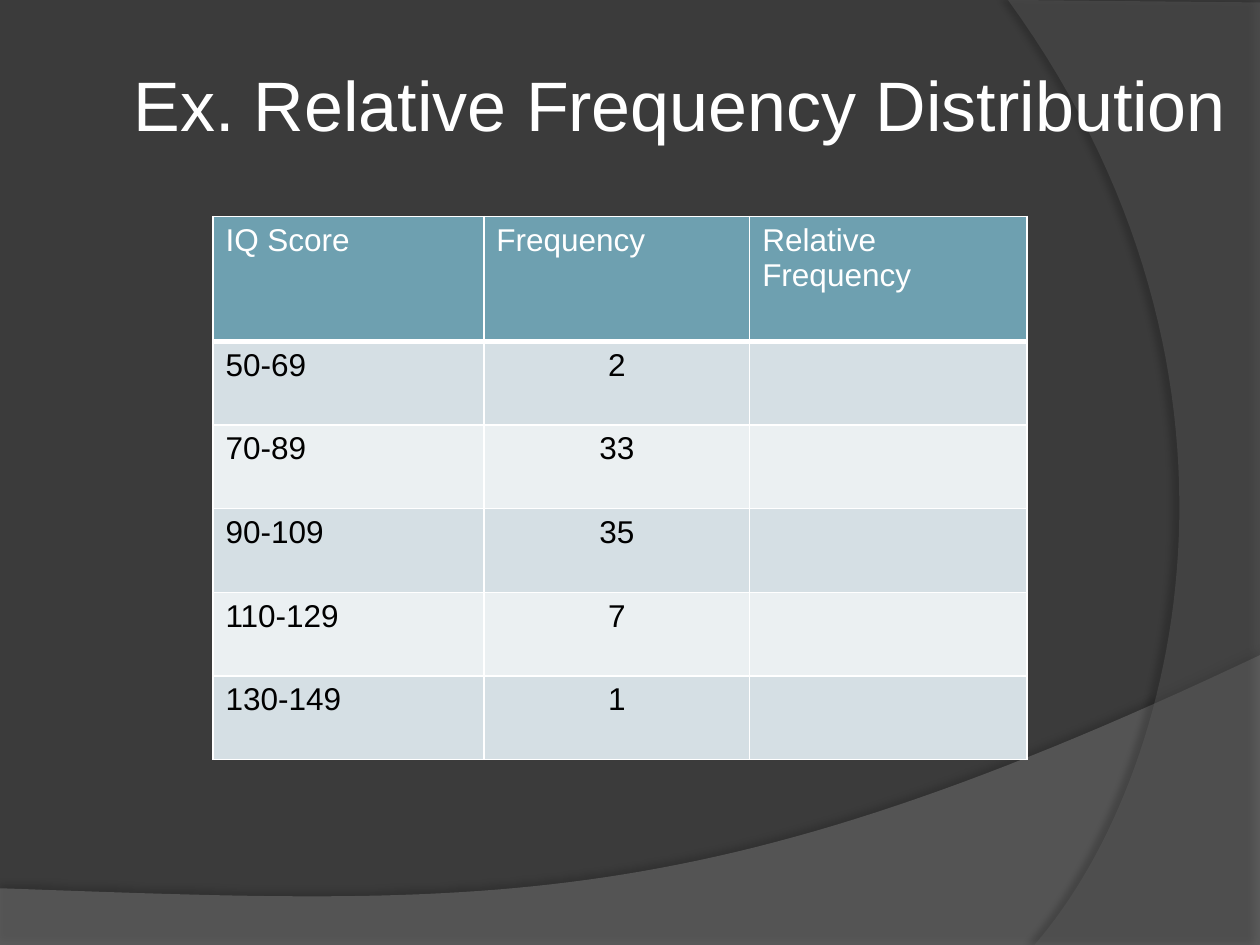
from dataclasses import dataclass

from lxml.etree import SubElement
from pptx import Presentation
from pptx.dml.color import RGBColor
from pptx.enum.text import MSO_ANCHOR, MSO_AUTO_SIZE, PP_ALIGN
from pptx.oxml.ns import qn
from pptx.util import Inches, Pt


@dataclass(frozen=True)
class Theme:
    font: str = "Arial"
    title_size: int = 40
    table_size: int = 18
    background: str = "3B3B3B"
    lower_wave: str = "7F7F7F"
    side_wave: str = "5E5E5E"
    shadow: str = "000000"
    light: str = "FFFFFF"
    dark: str = "000000"
    header: str = "6EA0B0"
    bands: tuple = ("D5DFE4", "EBF0F2")


THEME = Theme()
HEADINGS = ("IQ Score", "Frequency", "Relative Frequency")
SCORES = (
    ("50-69", "2", ""),
    ("70-89", "33", ""),
    ("90-109", "35", ""),
    ("110-129", "7", ""),
    ("130-149", "1", ""),
)


def add_span(para, text, size, color):
    span = para.add_run()
    span.text = text
    span.font.name = THEME.font
    span.font.size = Pt(size)
    span.font.color.rgb = RGBColor.from_string(color)


def curve(start, first, second, end, steps=60):
    points = []
    for step in range(steps + 1):
        t = step / steps
        weights = ((1 - t) ** 3, 3 * t * (1 - t) ** 2, 3 * t * t * (1 - t), t ** 3)
        points.append(tuple(
            sum(weight * value for weight, value in zip(weights, values))
            for values in zip(start, first, second, end)
        ))
    return points


def add_color(parent, color, opacity):
    node = SubElement(parent, qn("a:srgbClr"), val=color)
    SubElement(node, qn("a:alpha"), val=str(opacity * 1000))


def add_wave(page, points, color, opacity, shadow_opacity, distance, direction):
    corners = [(Inches(x), Inches(y)) for x, y in points]
    builder = page.shapes.build_freeform(*corners[0])
    builder.add_line_segments(corners[1:], close=True)
    wave = builder.convert_to_shape()
    wave.line.fill.background()
    wave.fill.solid()
    wave.fill.fore_color.rgb = RGBColor.from_string(color)
    properties = wave.element.spPr
    fill = properties.find(qn("a:solidFill"))
    fill.remove(fill[0])
    add_color(fill, color, opacity)
    effects = SubElement(properties, qn("a:effectLst"))
    shadow = SubElement(
        effects, qn("a:outerShdw"), blurRad=str(Pt(4)), dist=str(Pt(distance)),
        dir=str(direction * 60000), algn="ctr", rotWithShape="0",
    )
    add_color(shadow, THEME.shadow, shadow_opacity)


def add_backdrop(page, left, top, width, height):
    right, bottom = left + width, top + height
    page.background.fill.solid()
    page.background.fill.fore_color.rgb = RGBColor.from_string(THEME.background)
    lower_edge = curve((right, top + 5.2), (left + 5.59, top + 7.29),
                       (left + 3.91, top + 7.19), (left, top + 7.05))
    add_wave(page, [(left, bottom), (right, bottom), *lower_edge],
             THEME.lower_wave, 45, 35, 3.5, 270)
    side_edge = curve((left + 8.21, bottom), (left + 9.35, top + 6.19),
                      (left + 10.18, top + 3), (left + 8, top))
    add_wave(page, [(right, top + 0.02), (right, bottom), *side_edge],
             THEME.side_wave, 40, 45, 4, 180)


def place_title(page, text, left, top, width, height):
    title = page.shapes.title
    title.left, title.top = Inches(left), Inches(top)
    title.width, title.height = Inches(width), Inches(height)
    frame = title.text_frame
    frame.word_wrap = False
    frame.auto_size = MSO_AUTO_SIZE.SHAPE_TO_FIT_TEXT
    frame.vertical_anchor = MSO_ANCHOR.TOP
    para = frame.paragraphs[0]
    para.alignment = PP_ALIGN.LEFT
    add_span(para, text, THEME.title_size, THEME.light)
    page.shapes.element.append(title.element)


def style_cell(cell, fill, bottom_width):
    properties = cell._tc.get_or_add_tcPr()
    for side in ("L", "R", "T", "B"):
        width = bottom_width if side == "B" else 1
        border = SubElement(properties, qn(f"a:ln{side}"), w=str(Pt(width)))
        paint = SubElement(border, qn("a:solidFill"))
        SubElement(paint, qn("a:srgbClr"), val=THEME.light)
    cell.fill.solid()
    cell.fill.fore_color.rgb = RGBColor.from_string(fill)


def add_score_table(page, left, top, width, height):
    rows = (HEADINGS, *SCORES)
    table = page.shapes.add_table(
        len(rows), len(HEADINGS), Inches(left), Inches(top), Inches(width), Inches(height)
    ).table
    column_widths = (2.15, 2.11, width - 2.15 - 2.11)
    for column, column_width in zip(table.columns, column_widths):
        column.width = Inches(column_width)
    header_height = 0.99
    for index, values in enumerate(rows):
        is_header = index == 0
        row_height = header_height if is_header else (height - header_height) / len(SCORES)
        table.rows[index].height = Inches(row_height)
        fill = THEME.header if is_header else THEME.bands[(index - 1) % 2]
        color = THEME.light if is_header else THEME.dark
        for position, text in enumerate(values):
            cell = table.cell(index, position)
            style_cell(cell, fill, 3 if is_header else 1)
            para = cell.text_frame.paragraphs[0]
            para.font.size = Pt(THEME.table_size)
            if position == 1 and not is_header:
                para.alignment = PP_ALIGN.CENTER
            if text:
                add_span(para, text, THEME.table_size, color)
                para.runs[0].font.bold = False


def main():
    deck = Presentation()
    deck.slide_width, deck.slide_height = Inches(10), Inches(7.5)
    page = deck.slides.add_slide(deck.slide_layouts.get_by_name("Title Only"))
    add_backdrop(page, 0, 0, 10, 7.5)
    place_title(page, "Ex. Relative Frequency Distribution", 0.96, 0.44, 8.96, 0.77)
    add_score_table(page, 1.69, 1.72, 6.46, 4.31)
    deck.save("out.pptx")


if __name__ == "__main__":
    main()
